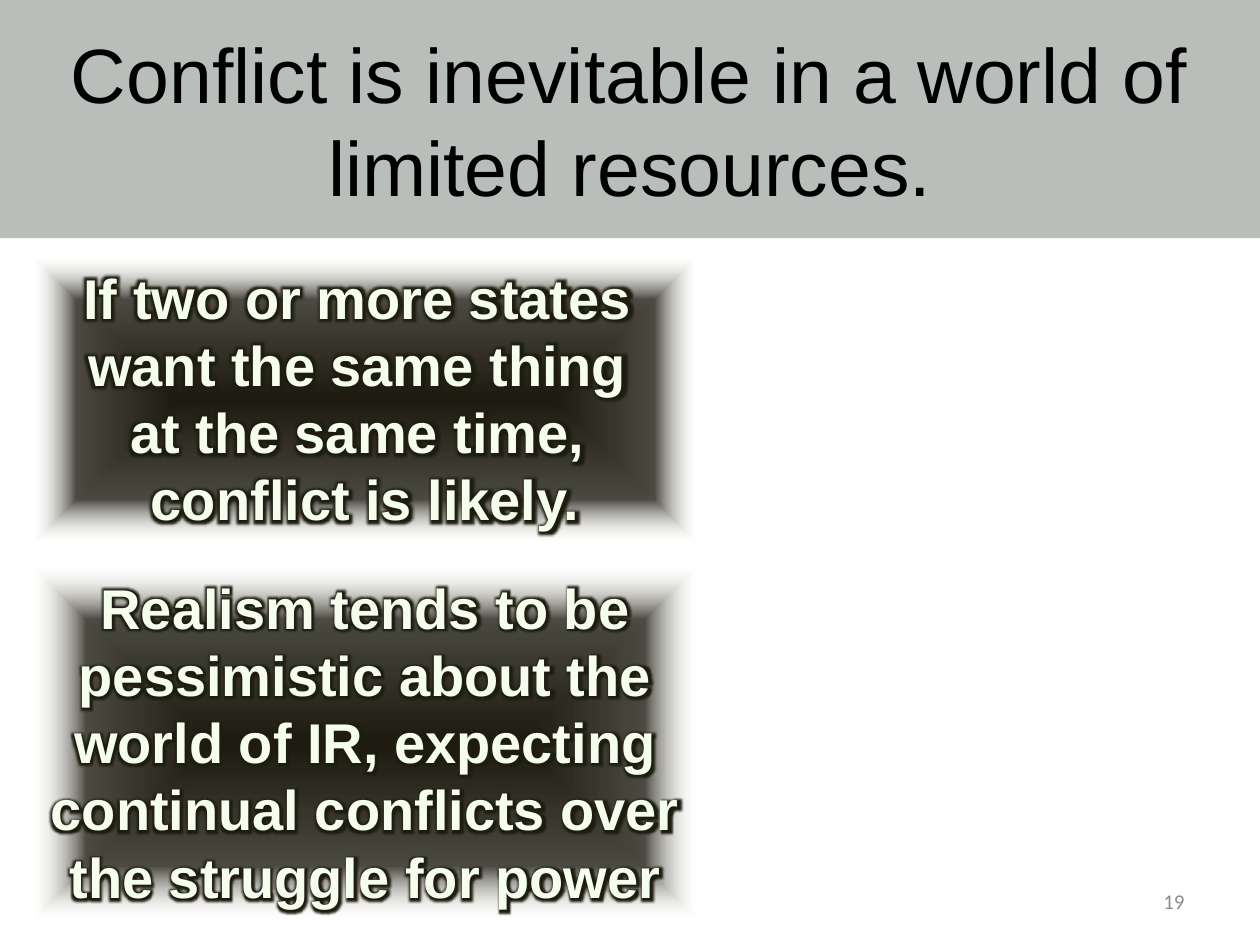
from lxml.etree import SubElement
from pptx import Presentation
from pptx.dml.color import RGBColor
from pptx.enum.shapes import MSO_SHAPE
from pptx.enum.text import MSO_ANCHOR, PP_ALIGN
from pptx.oxml import parse_xml
from pptx.oxml.ns import nsdecls, qn
from pptx.util import Inches, Pt

WIDTH, HEIGHT = 10, 7.5
INK, PALE, SAGE, GREY = "1E1C11", "F5FDEC", "39453C", "8C8C8C"
FADE_STOPS = [(0, INK, 100), (70, INK, 79), (100, "EEECE1", 0)]
STATES = [
    "If two or more states ",
    "want the same thing ",
    "at the same time, ",
    "conflict is likely.",
]
REALISM = [
    "Realism tends to be pessimistic about the world of IR, "
    "expecting continual conflicts over the struggle for power"
]


def colour(code):
    """Turn a hex string into a colour."""
    return RGBColor.from_string(code)


def emu(box):
    """Turn left, top, width and height in inches into lengths."""
    return [Inches(length) for length in box]


def write(frame, lines, size, font, code, align, bold=False):
    """Fill a text frame with one formatted paragraph per line."""
    frame.word_wrap = True
    frame.text = "\n".join(lines)
    for paragraph in frame.paragraphs:
        paragraph.alignment = align
        paragraph.line_spacing = Pt(size * 1.2)
        for run in paragraph.runs:
            run.font.size, run.font.name, run.font.bold = Pt(size), font, bold
            run.font.color.rgb = colour(code)


def fade_out(panel):
    """Give a panel a fill that fades from its centre to its edges."""
    stops = "".join(
        f'<a:gs pos="{place * 1000}"><a:srgbClr val="{code}">'
        f'<a:alpha val="{alpha * 1000}"/></a:srgbClr></a:gs>'
        for place, code, alpha in FADE_STOPS
    )
    panel.fill.background()
    properties = panel._element.spPr
    properties.replace(
        properties.find(qn("a:noFill")),
        parse_xml(
            f'<a:gradFill {nsdecls("a")} rotWithShape="1"><a:gsLst>{stops}</a:gsLst>'
            '<a:path path="shape"><a:fillToRect l="50000" t="50000" r="50000" b="50000"/>'
            "</a:path></a:gradFill>"
        ),
    )


def add_glow(run):
    """Surround the letters of a run with a dark glow."""
    run.font._element.find(qn("a:solidFill")).addnext(
        parse_xml(
            f'<a:effectLst {nsdecls("a")}><a:glow rad="{Pt(8)}">'
            f'<a:srgbClr val="{INK}"/></a:glow></a:effectLst>'
        )
    )


def place_title(slide, box, text):
    """Lay the title over a translucent band."""
    title = slide.shapes.title
    title.left, title.top, title.width, title.height = emu(box)
    title.fill.solid()
    title.fill.fore_color.rgb = colour(SAGE)
    tint = title._element.spPr.find(qn("a:solidFill")).find(qn("a:srgbClr"))
    SubElement(tint, qn("a:alpha"), val="35000")
    title.text_frame.vertical_anchor = MSO_ANCHOR.MIDDLE
    write(title.text_frame, [text], 44, "Arial", "000000", PP_ALIGN.CENTER)


def place_statement(slide, box, lines):
    """Place a glowing statement on a fading panel."""
    panel = slide.shapes.add_shape(MSO_SHAPE.RECTANGLE, *emu(box))
    panel.shadow.inherit = False
    panel.line.fill.background()
    fade_out(panel)
    frame = panel.text_frame
    frame.vertical_anchor = MSO_ANCHOR.TOP
    write(frame, lines, 32, "Arial", PALE, PP_ALIGN.CENTER, bold=True)
    for paragraph in frame.paragraphs:
        for run in paragraph.runs:
            add_glow(run)


def place_page_number(slide, box, number):
    """Place the page number at the right of its box."""
    frame = slide.shapes.add_textbox(*emu(box)).text_frame
    frame.vertical_anchor = MSO_ANCHOR.MIDDLE
    write(frame, [number], 12, "Calibri", GREY, PP_ALIGN.RIGHT)


def main():
    """Build and save the slide."""
    deck = Presentation()
    deck.slide_width, deck.slide_height = Inches(WIDTH), Inches(HEIGHT)
    slide = deck.slides.add_slide(deck.slide_layouts[5])
    margin, panel_width = WIDTH * 0.027, WIDTH * 0.526
    place_title(
        slide,
        (0, 0, WIDTH, HEIGHT * 0.252),
        "Conflict is inevitable in a world of limited resources.",
    )
    place_page_number(
        slide, (WIDTH * 0.717, HEIGHT * 0.927, WIDTH * 0.233, HEIGHT * 0.053), "19"
    )
    for top, height, lines in ((0.272, 0.301, STATES), (0.6, 0.372, REALISM)):
        place_statement(
            slide, (margin, HEIGHT * top, panel_width, HEIGHT * height), lines
        )
    deck.save("out.pptx")


if __name__ == "__main__":
    main()
